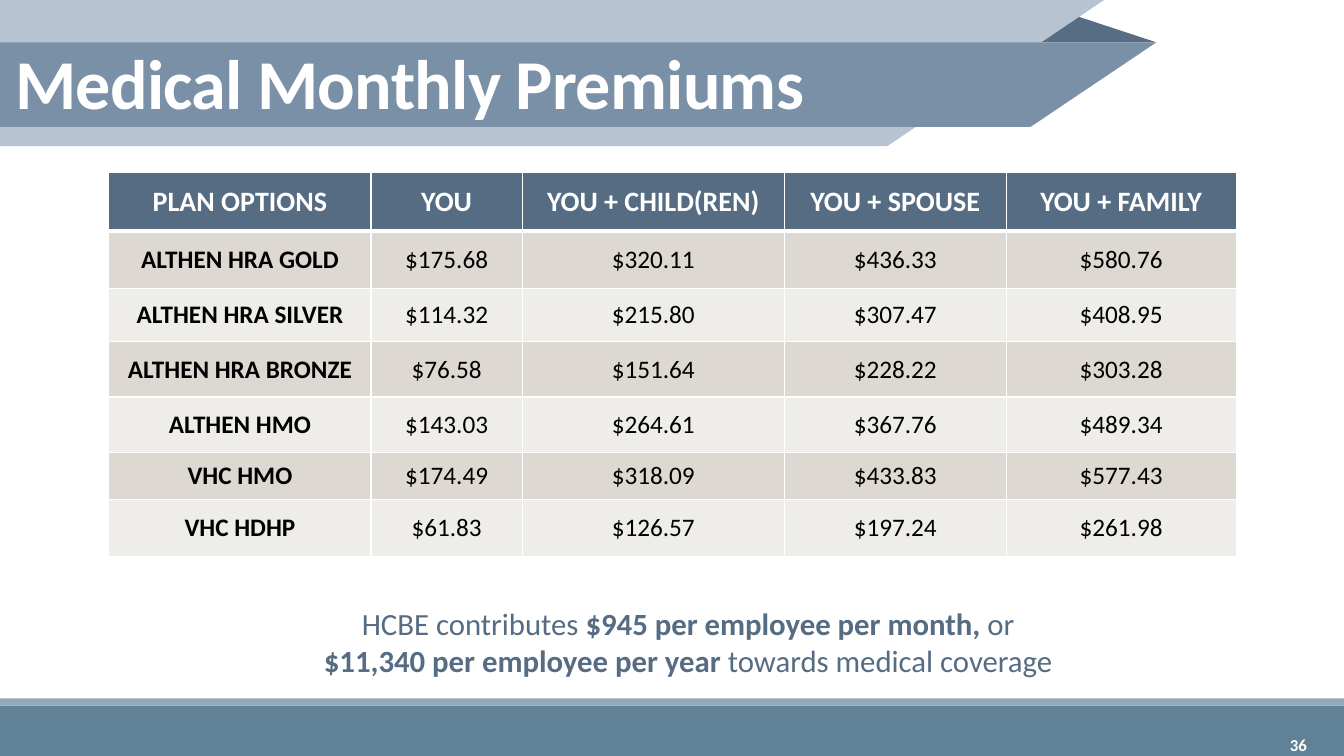
from pptx import Presentation
from pptx import util as u
from pptx.dml.color import RGBColor
from pptx.enum import shapes, text
from pptx.oxml import parse_xml
from pptx.oxml.ns import nsdecls

PX = 9144
FONT = "Calibri"
WHITE, BLACK, SLATE = "FFFFFF", "000000", "566C83"
STRIPES = ["DED8D3", "EFEDEA"]

TITLE = "Medical Monthly Premiums"
PAGE = "36"
PREMIUMS = [
    ["PLAN OPTIONS", "YOU", "YOU + CHILD(REN)", "YOU + SPOUSE", "YOU + FAMILY"],
    ["ALTHEN HRA GOLD", "$175.68", "$320.11", "$436.33", "$580.76"],
    ["ALTHEN HRA SILVER", "$114.32", "$215.80", "$307.47", "$408.95"],
    ["ALTHEN HRA BRONZE", "$76.58", "$151.64", "$228.22", "$303.28"],
    ["ALTHEN HMO", "$143.03", "$264.61", "$367.76", "$489.34"],
    ["VHC HMO", "$174.49", "$318.09", "$433.83", "$577.43"],
    ["VHC HDHP", "$61.83", "$126.57", "$197.24", "$261.98"],
]
COL_WIDTHS = [260, 150, 260, 220, 228]
ROW_HEIGHTS = [58, 57, 53, 55, 55, 47, 56]
CONTRIBUTION = [
    [("HCBE contributes ", False), ("$945 per employee per month, ", True), ("or", False)],
    [("$11,340 per employee per year ", True), ("towards medical coverage", False)],
]
FOOTER_BARS = [((0, 700, 1333, 50), "618197"), ((0, 693, 1333, 7), "92A9B9")]
RIBBONS = [
    ([(1021, 42), (1062, 14), (1147, 42)], "566D83"),
    ([(0, 0), (1095, 0), (880, 145), (0, 145)], "B7C3D0"),
    ([(0, 42), (1147, 42), (1022, 126), (0, 126)], "7990A7"),
]


def px(*lengths):
    return [u.Emu(n * PX) for n in lengths]


def rgb(value):
    return RGBColor.from_string(value)


def paint(sp, color):
    sp.shadow.inherit = False
    sp.fill.solid()
    sp.fill.fore_color.rgb = rgb(color)
    sp.line.fill.background()


def add_run(p, words, size, color, bold):
    r = p.add_run()
    r.text = words
    r.font.name, r.font.size, r.font.bold = FONT, u.Pt(size), bold
    r.font.color.rgb = rgb(color)
    return r


def add_text(s, box, lines, size, color, align):
    tf = s.shapes.add_textbox(*px(*box)).text_frame
    tf.word_wrap = True
    for i, runs in enumerate(lines):
        p = tf.add_paragraph() if i else tf.paragraphs[0]
        p.alignment = align
        for words, bold in runs:
            add_run(p, words, size, color, bold)
    return tf


def add_border(cell, side, width):
    cell._tc.get_or_add_tcPr().append(parse_xml(
        f'<a:ln{side} {nsdecls("a")} w="{u.Pt(width)}"><a:solidFill>'
        f'<a:srgbClr val="{WHITE}"/></a:solidFill></a:ln{side}>'))


def fill_cell(cell, words, row, col):
    header = row == 0
    for side in "LRTB":
        heavy = (row, side) in [(0, "B"), (1, "T")]
        add_border(cell, side, 3 if heavy else 1)
    cell.fill.solid()
    cell.fill.fore_color.rgb = rgb(SLATE if header else STRIPES[(row - 1) % 2])
    cell.vertical_anchor = text.MSO_ANCHOR.MIDDLE
    if row and col:
        cell.margin_left, cell.margin_right, cell.margin_top, cell.margin_bottom = px(6, 6, 3, 3)
    p = cell.text_frame.paragraphs[0]
    p.alignment = text.PP_ALIGN.CENTER
    add_run(p, words, 20 if header else 18, WHITE if header else BLACK, header or col == 0)


def add_premiums(s):
    table = s.shapes.add_table(
        len(PREMIUMS), len(COL_WIDTHS),
        *px(108, 171, sum(COL_WIDTHS), sum(ROW_HEIGHTS))).table
    for column, width in zip(table.columns, px(*COL_WIDTHS)):
        column.width = width
    for row, height in zip(table.rows, px(*ROW_HEIGHTS)):
        row.height = height
    for i, row in enumerate(PREMIUMS):
        for j, words in enumerate(row):
            fill_cell(table.cell(i, j), words, i, j)


def set_title(s):
    sp = s.shapes.title
    s.shapes._spTree.append(sp._element)
    sp.left, sp.top, sp.width, sp.height = px(5, 47, 1221, 107)
    tf = sp.text_frame
    tf.auto_size = text.MSO_AUTO_SIZE.NONE
    tf.vertical_anchor = text.MSO_ANCHOR.TOP
    p = tf.paragraphs[0]
    p.alignment = text.PP_ALIGN.LEFT
    p.line_spacing = 0.85
    r = add_run(p, TITLE, 50, WHITE, True)
    r.font._element.set("spc", "-50")


def main():
    prs = Presentation()
    prs.slide_width, prs.slide_height = px(1333, 750)
    s = prs.slides.add_slide(prs.slide_layouts[5])
    for box, color in FOOTER_BARS:
        paint(s.shapes.add_shape(shapes.MSO_SHAPE.RECTANGLE, *px(*box)), color)
    for points, color in RIBBONS:
        outline = s.shapes.build_freeform(*points[0], scale=PX)
        outline.add_line_segments(points[1:])
        paint(outline.convert_to_shape(), color)
    add_premiums(s)
    set_title(s)
    number = add_text(s, (1163, 719, 143, 40), [[(PAGE, True)]], 12, WHITE, text.PP_ALIGN.RIGHT)
    number.vertical_anchor = text.MSO_ANCHOR.MIDDLE
    note = add_text(s, (202, 595, 961, 84), CONTRIBUTION, 22, SLATE, text.PP_ALIGN.CENTER)
    note.auto_size = text.MSO_AUTO_SIZE.SHAPE_TO_FIT_TEXT
    prs.save("out.pptx")


if __name__ == "__main__":
    main()
